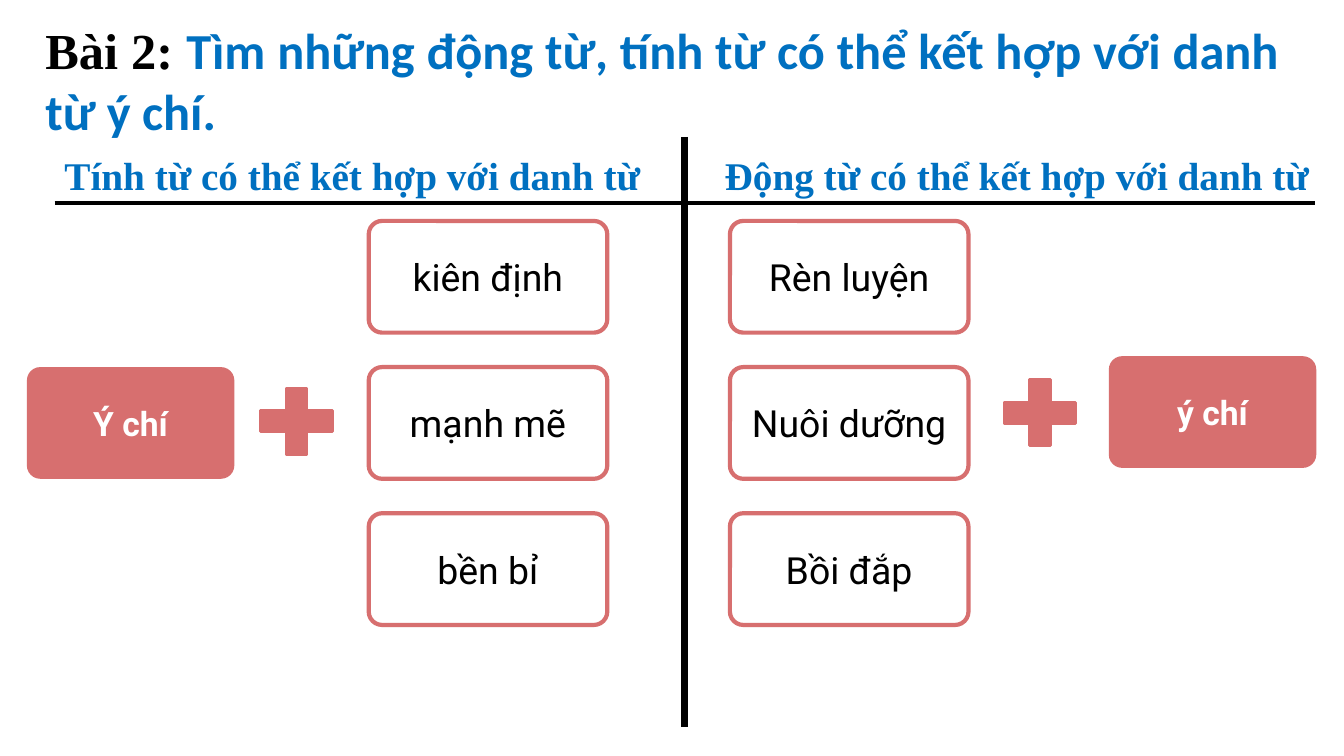
from lxml.etree import SubElement
from pptx import Presentation
from pptx.dml.color import RGBColor
from pptx.enum.shapes import MSO_CONNECTOR, MSO_SHAPE
from pptx.enum.text import MSO_ANCHOR, MSO_AUTO_SIZE, PP_ALIGN
from pptx.oxml.ns import qn
from pptx.util import Inches, Pt

WIDE, HIGH = Inches(13.33), Inches(7.5)
COLS, ROWS = 160, 90
HUES = {"rose": "D76F6F", "blue": "0070C0", "black": "000000", "white": "FFFFFF"}
FONTS = {
    "task": {"name": "Times New Roman", "size": Pt(36), "bold": True},
    "quest": {"name": "Calibri", "size": Pt(36), "bold": True},
    "head": {"name": "Times New Roman", "size": Pt(28), "bold": True},
    "key": {"name": "Roboto", "size": Pt(24), "bold": True},
    "word": {"name": "Roboto", "size": Pt(26.7), "bold": False},
}
FLOW = {"word_wrap": True, "auto_size": MSO_AUTO_SIZE.NONE,
        "vertical_anchor": MSO_ANCHOR.TOP}
CARD = {"word_wrap": True, "vertical_anchor": MSO_ANCHOR.MIDDLE,
        "margin_left": WIDE * 0.84 / COLS, "margin_right": WIDE * 0.84 / COLS,
        "margin_top": HIGH * 0.36 / ROWS, "margin_bottom": HIGH * 0.36 / ROWS}
CARD = {key: int(val) if key.startswith("margin") else val for key, val in CARD.items()}
WORDS = [
    (43.9, ["kiên định", "mạnh mẽ", "bền bỉ"]),
    (86.9, ["Rèn luyện", "Nuôi dưỡng", "Bồi đắp"]),
]
TOP, STEP, TALL = 26.3, 17.4, 13.3


def grid(x, y, w, h):
    return [int(WIDE * x / COLS), int(HIGH * y / ROWS),
            int(WIDE * w / COLS), int(HIGH * h / ROWS)]


def style(item, form):
    for key, val in form.items():
        setattr(item, key, val)


def hue(name):
    return RGBColor.from_string(HUES[name])


def write(para, text, font, color):
    run = para.add_run()
    run.text = text
    style(run.font, FONTS[font])
    run.font.color.rgb = hue(color)


def add_form(slide, kind, place, fill, width):
    form = slide.shapes.add_shape(kind, *grid(*place))
    form.shadow.inherit = False
    form.fill.solid()
    form.fill.fore_color.rgb = hue(fill)
    if width:
        style(form.line, {"width": Pt(width)})
        form.line.color.rgb = hue("rose")
    else:
        form.line.fill.background()
    return form


def add_card(slide, text, place, font, fill, color, width):
    card = add_form(slide, MSO_SHAPE.ROUNDED_RECTANGLE, place, fill, width)
    card.adjustments[0] = 0.12
    style(card.text_frame, CARD)
    para = card.text_frame.paragraphs[0]
    para.alignment = PP_ALIGN.CENTER
    write(para, text, font, color)


def add_head(slide, text, x, w):
    box = slide.shapes.add_textbox(*grid(x, 17.4, w, 6.8))
    style(box.text_frame, FLOW)
    write(box.text_frame.paragraphs[0], text, "head", "blue")


def add_title(slide):
    title = slide.shapes.title
    style(title, dict(zip(("left", "top", "width", "height"), grid(4.2, 1.7, 149.4, 15.7))))
    style(title.text_frame, FLOW)
    para = title.text_frame.paragraphs[0]
    style(para, {"alignment": PP_ALIGN.JUSTIFY, "line_spacing": 1.0, "space_before": Pt(0)})
    write(para, "Bài 2: ", "task", "black")
    write(para, "Tìm những động từ, tính từ có thể kết hợp với danh từ ý chí.", "quest", "blue")


def add_rule(slide, start, end, width):
    rule = slide.shapes.add_connector(MSO_CONNECTOR.STRAIGHT, *grid(*start, *end))
    rule.line.width = Pt(width)
    rule.line.color.rgb = hue("black")
    SubElement(rule._element.spPr, qn("a:effectLst"))


def main():
    deck = Presentation()
    style(deck, {"slide_width": WIDE, "slide_height": HIGH})
    slide = deck.slides.add_slide(deck.slide_layouts[5])
    add_title(slide)
    for text, x, y in [("Ý chí", 3.2, 43.7), ("ý chí", 132, 42.4)]:
        add_card(slide, text, (x, y, 24.7, TALL), "key", "rose", "white", 0)
    for x, words in WORDS:
        for row, text in enumerate(words):
            place = (x, TOP + row * STEP, 28.4, TALL)
            add_card(slide, text, place, "word", "white", "black", 3)
    for x, y in [(29.5, 44.8), (118, 43.8)]:
        add_form(slide, MSO_SHAPE.MATH_PLUS, (x, y, 11.6, 10.7), "rose", 2)
    add_head(slide, "Tính từ có thể kết hợp với danh từ", 6.5, 74.2)
    add_head(slide, "Động từ có thể kết hợp với danh từ", 85.1, 74.6)
    add_rule(slide, (81.5, 16.3), (81.5, 86.6), 4.5)
    add_rule(slide, (6.5, 24.2), (156.6, 24.2), 3)
    deck.save("out.pptx")


if __name__ == "__main__":
    main()
